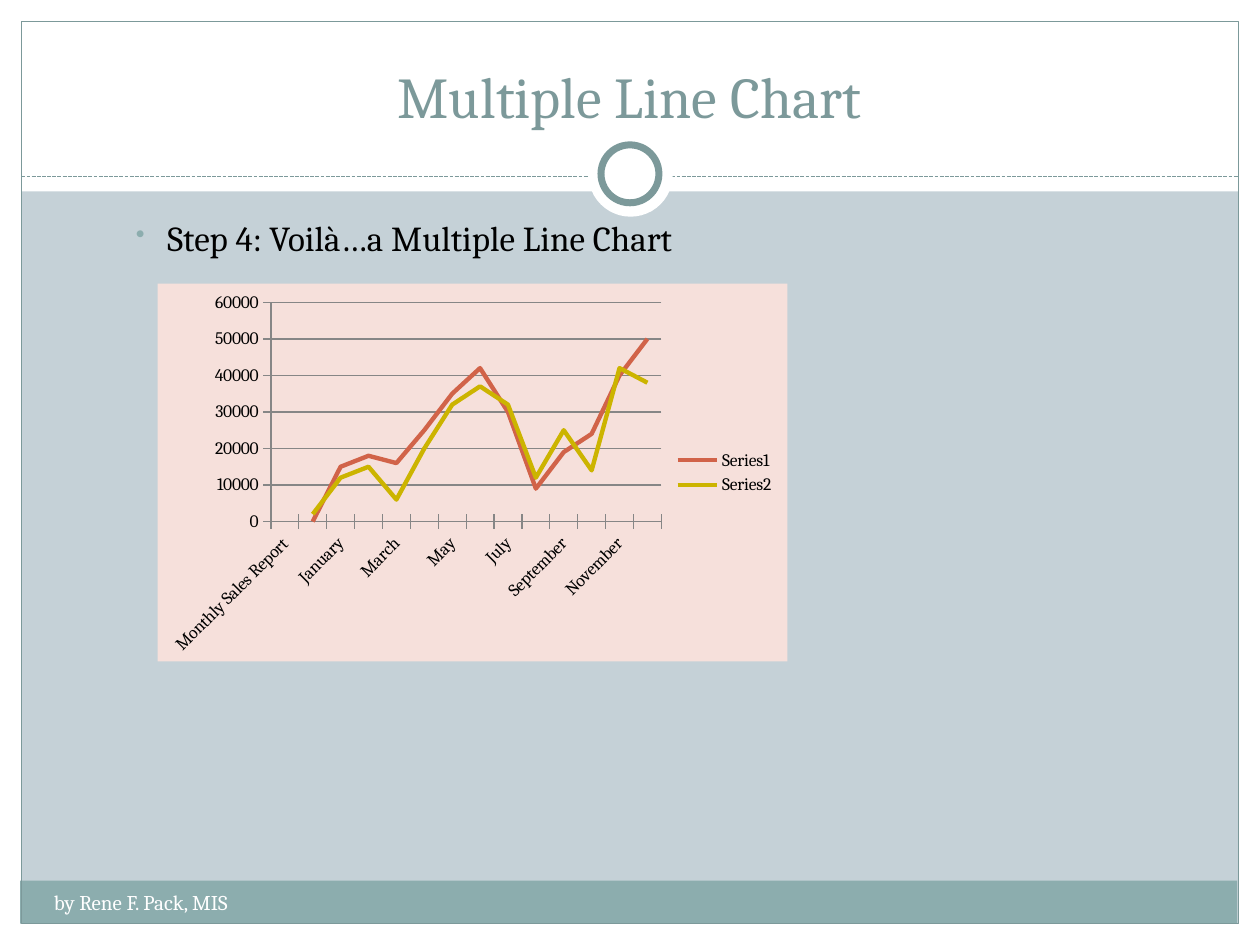
from lxml import etree
from pptx import Presentation
from pptx.chart.data import CategoryChartData
from pptx.dml.color import RGBColor
from pptx.enum import chart as ch, dml, shapes, text
from pptx.oxml import parse_xml
from pptx.oxml.ns import nsdecls, qn
from pptx.util import Inches, Pt

FONT = "Cambria"
WHITE, TEAL, SAGE, PALE, ROSE, GREY, BLACK = (
    "FFFFFF", "7C999A", "8CADAE", "C5D1D7", "F6E0DB", "868686", "000000")
RECT, OVAL = shapes.MSO_SHAPE.RECTANGLE, shapes.MSO_SHAPE.OVAL

# kind, (left, top, width, height), fill, line, line width
FRAME = [
    (RECT, (0, 7.33, 10, 0.17), WHITE, None, 0),
    (RECT, (0, 0, 10, 1.52), WHITE, None, 0),
    (RECT, (0, 0, 0.17, 7.5), WHITE, None, 0),
    (RECT, (9.83, 0, 0.17, 7.5), WHITE, None, 0),
    (RECT, (0.16, 6.99, 9.66, 0.34), SAGE, None, 0),
    (RECT, (0.17, 0.17, 9.66, 7.16), None, TEAL, 0.75),
]
RINGS = [
    (OVAL, (4.67, 1.05, 0.67, 0.67), WHITE, None, 0),
    (OVAL, (4.77, 1.15, 0.46, 0.46), WHITE, TEAL, 4),
]
CATS = ["Monthly Sales Report", "Month", "January", "February", "March",
        "April", "May", "June", "July", "August", "September", "October",
        "November", "December"]
SALES = [
    ("Series1", "D16349", [None, 0, 15000, 18000, 16000, 25000, 35000, 42000,
                           30000, 9000, 19000, 24000, 40000, 50000]),
    ("Series2", "CCB400", [None, 2000, 12000, 15000, 6000, 20000, 32000, 37000,
                           32000, 12000, 25000, 14000, 42000, 38000]),
]
PLOT = {"x": 0.18, "y": 0.05, "w": 0.62, "h": 0.58}


def rgb(code):
    return RGBColor.from_string(code)


def inches(box):
    return [Inches(n) for n in box]


def draw(slide, kind, box, fill, line, width):
    shape = slide.shapes.add_shape(kind, *inches(box))
    shape.shadow.inherit = False
    if fill:
        shape.fill.solid()
        shape.fill.fore_color.rgb = rgb(fill)
    else:
        shape.fill.background()
    if line:
        shape.line.color.rgb = rgb(line)
        shape.line.width = Pt(width)
    else:
        shape.line.fill.background()


def write(slide, words, box, size, color, align=text.PP_ALIGN.LEFT,
          anchor=text.MSO_ANCHOR.TOP):
    frame = slide.shapes.add_textbox(*inches(box)).text_frame
    frame.word_wrap = True
    frame.vertical_anchor = anchor
    para = frame.paragraphs[0]
    para.alignment = align
    run = para.add_run()
    run.text = words
    run.font.name, run.font.size = FONT, Pt(size)
    run.font.color.rgb = rgb(color)
    return para


def add_bullet(para, color):
    para.space_before = Pt(4)
    props = para._p.get_or_add_pPr()
    props.set("marL", str(Inches(0.9)))
    props.set("indent", str(Inches(-0.25)))
    tint = etree.SubElement(props, qn("a:buClr"))
    etree.SubElement(tint, qn("a:srgbClr"), val=color)
    etree.SubElement(props, qn("a:buSzPct"), val="75000")
    etree.SubElement(props, qn("a:buChar"), char="•")


def add_divider(slide):
    rule = slide.shapes.add_connector(
        shapes.MSO_CONNECTOR.STRAIGHT, *inches((0.17, 1.4, 9.83, 1.4)))
    rule.line.color.rgb = rgb(TEAL)
    rule.line.width = Pt(0.75)
    rule.line.dash_style = dml.MSO_LINE.SQUARE_DOT
    dash = rule.line._ln.find(qn("a:prstDash"))
    dash.set("val", "sysDash")
    etree.SubElement(rule._element.spPr, qn("a:effectLst"))


def add_sales(slide, box):
    data = CategoryChartData()
    data.categories = CATS
    for name, _, vals in SALES:
        data.add_series(name, vals)
    chart = slide.shapes.add_chart(
        ch.XL_CHART_TYPE.LINE, *inches(box), data).chart
    chart.has_title = False
    chart.font.name, chart.font.size = FONT, Pt(10)
    chart.font.color.rgb = rgb(BLACK)
    chart.has_legend = True
    chart.legend.position = ch.XL_LEGEND_POSITION.RIGHT
    chart.legend.include_in_layout = False

    plot = chart.plots[0]
    plot.vary_by_categories = False
    for series, (_, color, _) in zip(plot.series, SALES):
        series.smooth = False
        series.marker.style = ch.XL_MARKER_STYLE.NONE
        series.format.line.color.rgb = rgb(color)
        series.format.line.width = Pt(2.5)

    months, value = chart.category_axis, chart.value_axis
    value.minimum_scale, value.maximum_scale, value.major_unit = 0, 60000, 10000
    value.has_major_gridlines = True
    for part in (months, value, value.major_gridlines):
        part.format.line.color.rgb = rgb(GREY)
        part.format.line.width = Pt(0.75)
    for axis in (months, value):
        axis.major_tick_mark = ch.XL_TICK_MARK.CROSS
    months.tick_labels.font.size = Pt(10)
    months._element.txPr.bodyPr.set("rot", "-2700000")
    skip = parse_xml(f'<c:tickLblSkip {nsdecls("c")} val="2"/>')
    months._element.find(qn("c:noMultiLvlLbl")).addprevious(skip)

    area = chart._chartSpace.chart.plotArea
    for old in area.findall(qn("c:layout")):
        area.remove(old)
    sizes = "".join(f'<c:{k} val="{v}"/>' for k, v in PLOT.items())
    area.insert(0, parse_xml(
        f'<c:layout {nsdecls("c")}><c:manualLayout>'
        '<c:layoutTarget val="inner"/><c:xMode val="edge"/>'
        f'<c:yMode val="edge"/>{sizes}</c:manualLayout></c:layout>'))
    chart._chartSpace.chart.addnext(parse_xml(
        f'<c:spPr {nsdecls("c", "a")}><a:solidFill><a:srgbClr val="{ROSE}"/>'
        '</a:solidFill><a:ln><a:noFill/></a:ln></c:spPr>'))


def main():
    deck = Presentation()
    deck.slide_width, deck.slide_height = Inches(10), Inches(7.5)
    slide = deck.slides.add_slide(deck.slide_layouts[6])
    slide.background.fill.solid()
    slide.background.fill.fore_color.rgb = rgb(PALE)
    for item in FRAME:
        draw(slide, *item)
    add_divider(slide)
    for item in RINGS:
        draw(slide, *item)
    # White halo hides the divider behind the ring.
    write(slide, "Multiple Line Chart", (0.33, 0.25, 9.33, 0.83), 33, TEAL,
          align=text.PP_ALIGN.CENTER, anchor=text.MSO_ANCHOR.BOTTOM)
    step = write(slide, "Step 4: Voilà…a Multiple Line Chart",
                 (0.33, 1.67, 9.3, 5), 20, BLACK)
    add_bullet(step, SAGE)
    add_sales(slide, (1.25, 2.25, 5, 3))
    write(slide, "by Rene F. Pack, MIS", (0.33, 7.01, 3.92, 0.4), 12, WHITE)
    deck.save("out.pptx")


if __name__ == "__main__":
    main()
